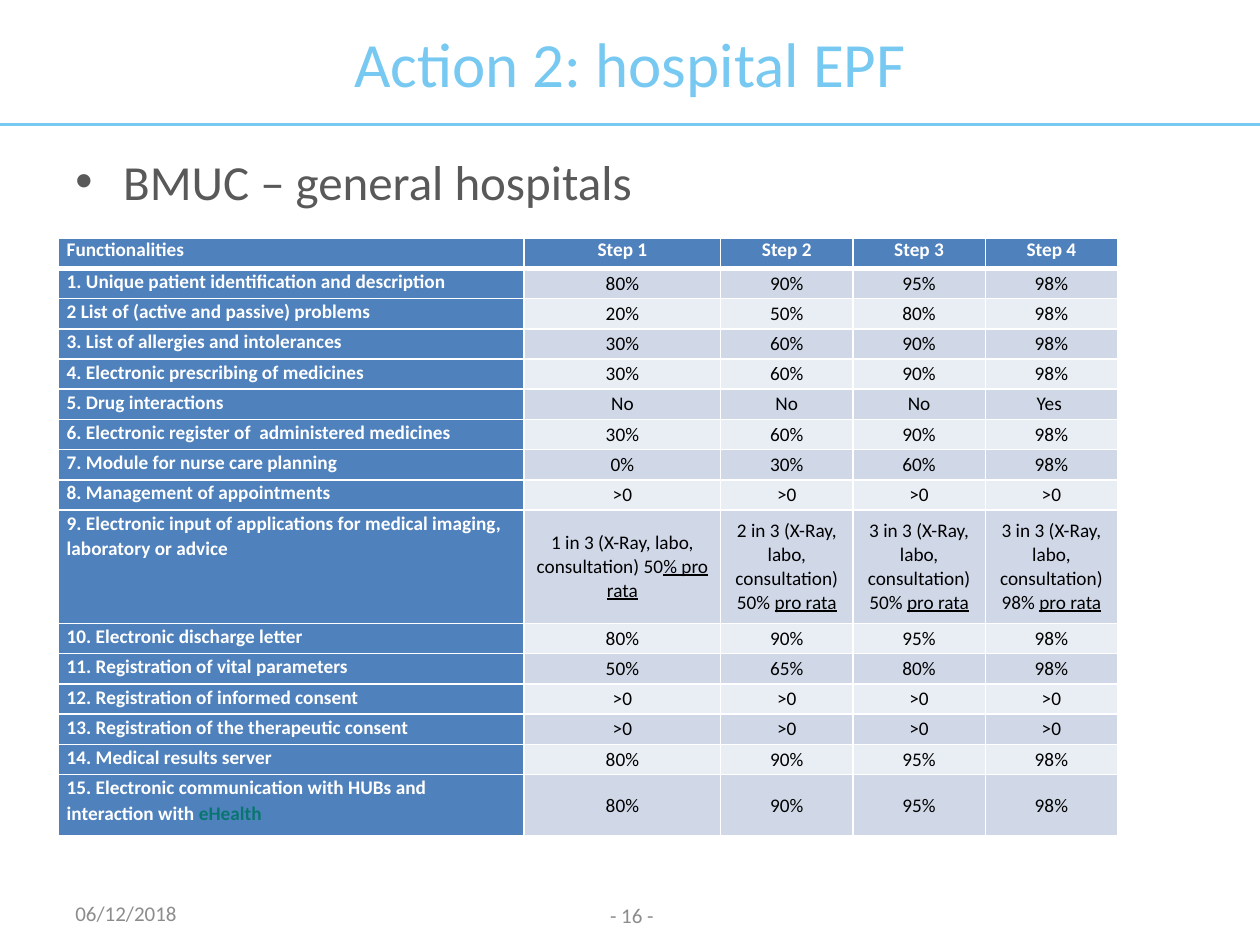
from lxml.etree import SubElement
from pptx import Presentation
from pptx.dml.color import RGBColor
from pptx.enum.shapes import MSO_CONNECTOR
from pptx.enum.text import MSO_ANCHOR, PP_ALIGN
from pptx.oxml import parse_xml
from pptx.oxml.ns import nsdecls, qn
from pptx.util import Inches, Pt

FONT = "Calibri"
COLORS = {
    "accent": "77C9F2",
    "body": "595959",
    "footer": "8C8C8C",
    "header": "4F81BD",
    "odd": "D0D8E8",
    "even": "E9EDF4",
    "white": "FFFFFF",
    "black": "000000",
    "teal": "087670",
}
COL_WIDTHS = [3.7, 1.56, 1.05, 1.05, 1.05]
ROW_HEIGHT = 0.24
TALL_ROWS = {9: 0.9, 15: 0.49}
RATA = ("pro rata", {"underline": True})
ROWS = [
    ("Functionalities", "Step 1", "Step 2", "Step 3", "Step 4"),
    ("1. Unique patient identification and description", "80%", "90%", "95%", "98%"),
    ("2 List of (active and passive) problems", "20%", "50%", "80%", "98%"),
    ("3. List of allergies and intolerances", "30%", "60%", "90%", "98%"),
    ("4. Electronic prescribing of medicines", "30%", "60%", "90%", "98%"),
    ("5. Drug interactions", "No", "No", "No", "Yes\u00a0"),
    ("6. Electronic register of  administered medicines", "30%", "60%", "90%", "98%"),
    ("7. Module for nurse care planning", "0%", "30%", "60%", "98%"),
    ("8. Management of appointments", ">0", ">0", ">0", ">0"),
    (
        "9. Electronic input of applications for medical imaging, laboratory or advice",
        [("1 in 3 (X-Ray, labo, consultation) 50", {}), ("% pro rata", {"underline": True})],
        [("2 in 3 (X-Ray, labo, consultation) 50% ", {}), RATA],
        [("3 in 3 (X-Ray, labo, consultation) 50% ", {}), RATA],
        [("3 in 3 (X-Ray, labo, consultation) 98% ", {}), RATA],
    ),
    ("10. Electronic discharge letter", "80%", "90%", "95%", "98%"),
    ("11. Registration of vital parameters", "50%", "65%", "80%", "98%"),
    ("12. Registration of informed consent", ">0", ">0", ">0", ">0"),
    ("13. Registration of the therapeutic consent", ">0", ">0", ">0", ">0"),
    ("14. Medical results server", "80%", "90%", "95%", "98%"),
    (
        [
            ("15. Electronic communication with HUBs and interaction with ", {}),
            ("eHealth", {"color": "teal"}),
        ],
        "80%", "90%", "95%", "98%",
    ),
]


def rgb(name):
    return RGBColor.from_string(COLORS[name])


def write(tf, text, size, color, bold=False, align=PP_ALIGN.LEFT,
          anchor=MSO_ANCHOR.TOP, spacing=None, after=0):
    tf.word_wrap = True
    tf.vertical_anchor = anchor
    p = tf.paragraphs[0]
    p.alignment = align
    p.space_before = Pt(0)
    p.space_after = Pt(after)
    if spacing:
        p.line_spacing = spacing
    runs = [(text, {})] if isinstance(text, str) else text
    for content, extra in runs:
        r = p.add_run()
        r.text = content
        r.font.name = FONT
        r.font.size = Pt(size)
        r.font.bold = bold
        r.font.underline = extra.get("underline")
        r.font.color.rgb = rgb(extra.get("color", color))
    return p


def add_title(s, text):
    sp = s.shapes.title
    sp.left, sp.top, sp.width, sp.height = 0, 0, Inches(10), Inches(0.99)
    write(sp.text_frame, text, 36, "accent", align=PP_ALIGN.CENTER,
          anchor=MSO_ANCHOR.MIDDLE)


def add_rule(s, y):
    line = s.shapes.add_connector(
        MSO_CONNECTOR.STRAIGHT, 0, Inches(y), Inches(10), Inches(y))
    line.line.color.rgb = rgb("accent")
    line.line.width = Pt(1.5)
    SubElement(line._element.spPr, qn("a:effectLst"))


def add_text(s, text, left, top, width, height, **fmt):
    sp = s.shapes.add_textbox(Inches(left), Inches(top), Inches(width), Inches(height))
    return write(sp.text_frame, text, **fmt)


def add_bullet(p, indent):
    pPr = p._p.get_or_add_pPr()
    pPr.set("marL", str(Inches(indent)))
    pPr.set("indent", str(-Inches(indent)))
    SubElement(pPr, qn("a:buFont")).set("typeface", "Arial")
    SubElement(pPr, qn("a:buChar")).set("char", "•")


def set_borders(cell, top, bottom):
    tcPr = cell._tc.get_or_add_tcPr()
    sides = {"lnL": 1, "lnR": 1, "lnT": top, "lnB": bottom}
    for i, (side, width) in enumerate(sides.items()):
        tcPr.insert(i, parse_xml(
            f'<a:{side} {nsdecls("a")} w="{Pt(width)}"><a:solidFill>'
            f'<a:srgbClr val="{COLORS["white"]}"/></a:solidFill></a:{side}>'))


def format_cell(cell, text, row, col):
    header = row == 0 or col == 0
    fill = "header" if header else "odd" if row % 2 else "even"
    cell.fill.solid()
    cell.fill.fore_color.rgb = rgb(fill)
    cell.margin_left = cell.margin_right = Inches(0.07)
    cell.margin_top = cell.margin_bottom = 0
    write(cell.text_frame, text, 11, "white" if header else "black", bold=header,
          align=PP_ALIGN.CENTER if col else PP_ALIGN.LEFT,
          spacing=1.07 if row and not col else None, after=2)
    cell.vertical_anchor = MSO_ANCHOR.TOP if header else MSO_ANCHOR.MIDDLE
    set_borders(cell, top=3 if row == 1 else 1, bottom=3 if row == 0 else 1)


def add_step_table(s, left, top):
    heights = [TALL_ROWS.get(i, ROW_HEIGHT) for i in range(len(ROWS))]
    table = s.shapes.add_table(
        len(ROWS), len(COL_WIDTHS), Inches(left), Inches(top),
        Inches(sum(COL_WIDTHS)), Inches(sum(heights))).table
    table.horz_banding = False
    for column, width in zip(table.columns, COL_WIDTHS):
        column.width = Inches(width)
    for i, (height, values) in enumerate(zip(heights, ROWS)):
        table.rows[i].height = Inches(height)
        for j, value in enumerate(values):
            format_cell(table.cell(i, j), value, i, j)


def main():
    prs = Presentation()
    prs.slide_width, prs.slide_height = Inches(10), Inches(7.5)
    s = prs.slides.add_slide(prs.slide_layouts[5])
    add_rule(s, 0.99)
    add_title(s, "Action 2: hospital EPF")
    p = add_text(s, "BMUC – general hospitals", 0.5, 1.15, 9, 5.75,
                 size=28, color="body")
    add_bullet(p, 0.38)
    add_step_table(s, 0.46, 1.89)
    footer = {"size": 12, "color": "footer", "anchor": MSO_ANCHOR.MIDDLE}
    add_text(s, "06/12/2018", 0.5, 7.05, 2.33, 0.4, **footer)
    add_text(s, "- 16 -", 3.85, 7.06, 2.33, 0.4, align=PP_ALIGN.CENTER, **footer)
    prs.save("out.pptx")


if __name__ == "__main__":
    main()
